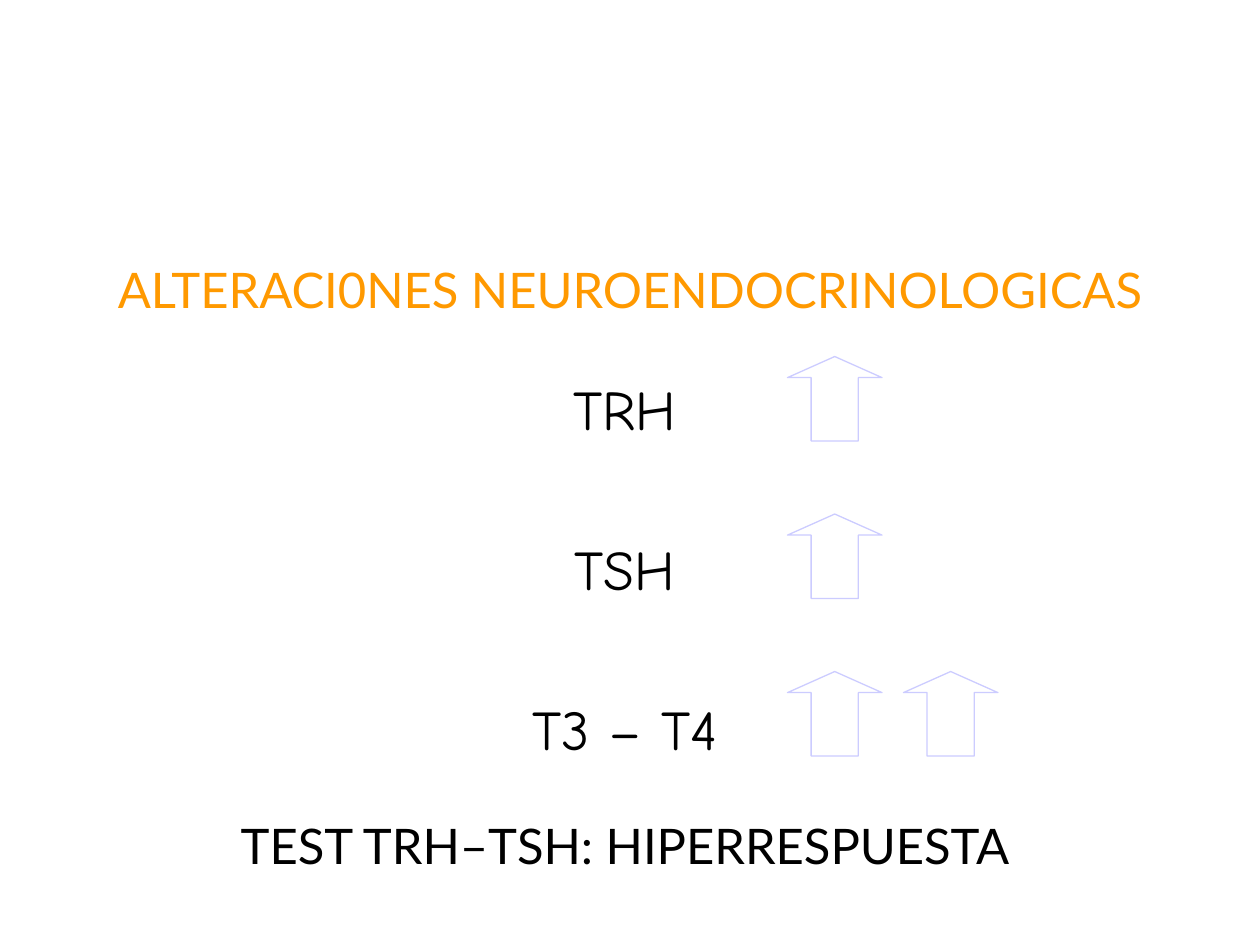
from dataclasses import dataclass

from pptx import Presentation
from pptx.dml.color import RGBColor
from pptx.enum.shapes import MSO_SHAPE
from pptx.enum.text import MSO_ANCHOR, PP_ALIGN
from pptx.util import Inches, Pt

UP_ARROW = MSO_SHAPE.UP_ARROW
CENTER = PP_ALIGN.CENTER
MIDDLE = MSO_ANCHOR.MIDDLE
TOP = MSO_ANCHOR.TOP


@dataclass(frozen=True)
class Theme:
    title_color: RGBColor = RGBColor(0xFF, 0x99, 0x00)
    text_color: RGBColor = RGBColor(0x00, 0x00, 0x00)
    arrow_color: RGBColor = RGBColor(0xCC, 0xCC, 0xFF)
    main_font: str = "Lato"
    hormone_font: str = "Comic Neue"
    main_size: int = 28
    hormone_size: int = 32
    arrow_line: float = 0.75


THEME = Theme()
HORMONES = [("TRH", 1), ("TSH", 1), ("T3 – T4", 2)]
CONCLUSION = "TEST TRH–TSH: HIPERRESPUESTA"


def write_line(para, text, font, size, color, space_before=0):
    para.text = text
    para.alignment = CENTER
    para.space_before = Pt(space_before)
    for span in para.runs:
        span.font.name = font
        span.font.size = Pt(size)
        span.font.color.rgb = color


def add_title(page, left, top, width, height):
    title = page.shapes.title
    title.left, title.top = Inches(left), Inches(top)
    title.width, title.height = Inches(width), Inches(height)
    title.text_frame.vertical_anchor = MIDDLE
    write_line(title.text_frame.paragraphs[0], "ALTERACI0NES NEUROENDOCRINOLOGICAS",
               THEME.main_font, THEME.main_size, THEME.title_color)


def add_findings(page, left, top, width, height):
    box = page.shapes.add_textbox(Inches(left), Inches(top), Inches(width), Inches(height))
    frame = box.text_frame
    frame.word_wrap = True
    frame.vertical_anchor = TOP
    for index, (name, _) in enumerate(HORMONES):
        para = frame.add_paragraph() if index else frame.paragraphs[0]
        write_line(para, name, THEME.hormone_font, THEME.hormone_size,
                   THEME.text_color, 53 if index else 0)
    write_line(frame.add_paragraph(), CONCLUSION, THEME.main_font,
               THEME.main_size, THEME.text_color, 31)


def add_arrows(page, left, top, column_pitch, row_pitch):
    for row, (_, count) in enumerate(HORMONES):
        for column in range(count):
            arrow = page.shapes.add_shape(
                UP_ARROW, Inches(left + column * column_pitch),
                Inches(top + row * row_pitch), Inches(0.75), Inches(0.67))
            arrow.adjustments[0] = 0.5
            arrow.adjustments[1] = 0.25
            arrow.shadow.inherit = False
            arrow.fill.background()
            arrow.line.color.rgb = THEME.arrow_color
            arrow.line.width = Pt(THEME.arrow_line)


def main():
    deck = Presentation()
    deck.slide_width, deck.slide_height = Inches(10), Inches(7.5)
    page = deck.slides.add_slide(deck.slide_layouts[5])
    add_title(page, 0.75, 1.67, 8.5, 1.25)
    add_findings(page, 1, 2.92, 7.92, 4.25)
    add_arrows(page, 6.25, 2.83, 0.92, 1.25)
    deck.save("out.pptx")


if __name__ == "__main__":
    main()
